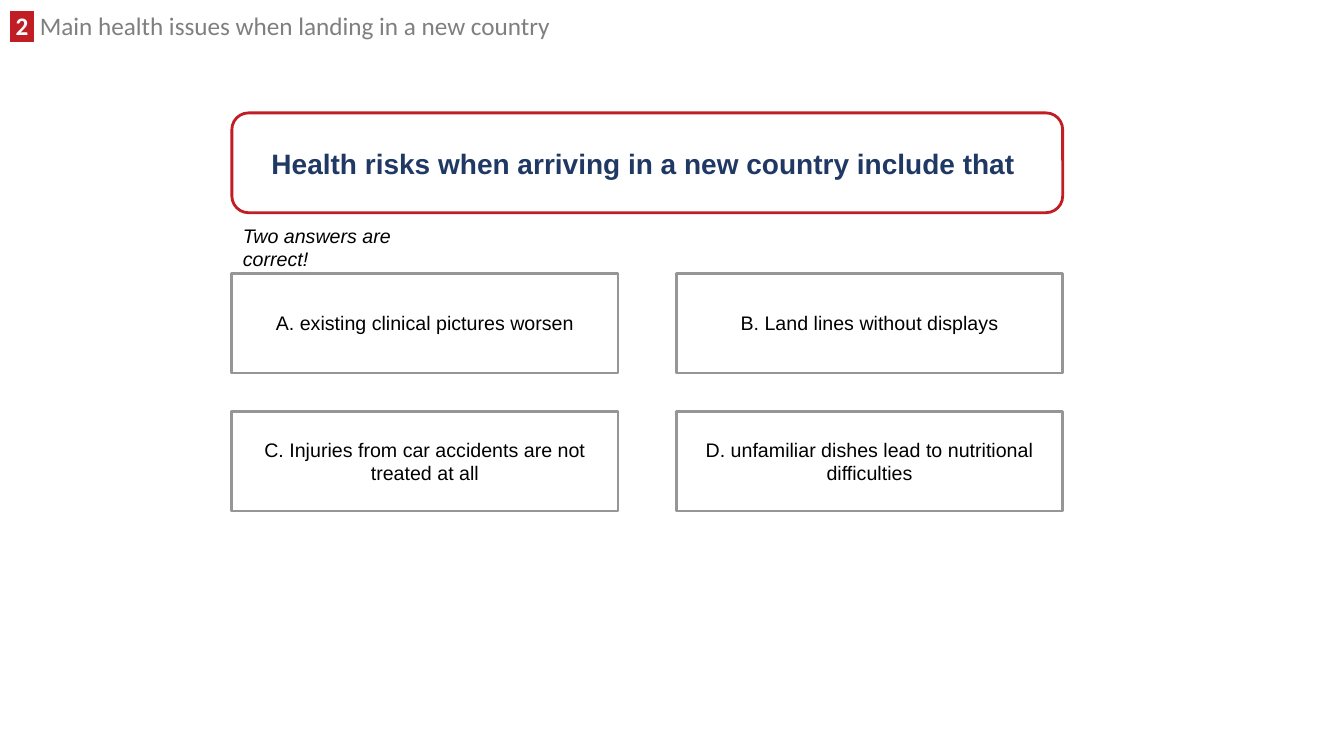
from lxml import etree
from pptx import Presentation
from pptx.dml.color import RGBColor
from pptx.enum.shapes import MSO_SHAPE
from pptx.enum.text import MSO_ANCHOR, MSO_AUTO_SIZE, PP_ALIGN
from pptx.oxml.ns import qn
from pptx.util import Inches, Pt

RECTANGLE = MSO_SHAPE.RECTANGLE
ROUNDED = MSO_SHAPE.ROUNDED_RECTANGLE
MIDDLE = MSO_ANCHOR.MIDDLE
CENTER = PP_ALIGN.CENTER
GROW = MSO_AUTO_SIZE.SHAPE_TO_FIT_TEXT

WHITE = RGBColor(0xFF, 0xFF, 0xFF)
BLACK = RGBColor(0, 0, 0)
RED = RGBColor(0xC0, 0x1E, 0x24)
NAVY = RGBColor(0x20, 0x38, 0x64)
GRAY = RGBColor(0x7F, 0x7F, 0x7F)
BORDER_GRAY = RGBColor(0x96, 0x96, 0x96)

SECTION_NUMBER = " 2 "
SECTION_TITLE = " Main health issues when landing in a new country"
QUESTION = "Health risks when arriving in a new country include that "
HINT = "Two answers are correct!"
ANSWERS = [
    "A. existing clinical pictures worsen",
    "B. Land lines without displays",
    "C. Injuries from car accidents are not treated at all",
    "D. unfamiliar dishes lead to nutritional difficulties",
]

NUMBER_FORMAT = {"name": "Calibri", "size": Pt(18), "bold": True, "color": WHITE}
TITLE_FORMAT = {"name": "Calibri", "size": Pt(18), "bold": False, "color": GRAY}
QUESTION_FORMAT = {"name": "Arial", "size": Pt(20), "bold": True, "color": NAVY}
ANSWER_FORMAT = {"name": "Arial", "size": Pt(14), "color": BLACK}
HINT_FORMAT = {**ANSWER_FORMAT, "italic": True}

LEFT, QUESTION_TOP, QUESTION_WIDTH = 2.3, 1.12, 8.24
ANSWERS_TOP, ANSWER_WIDTH, BOX_HEIGHT = 2.71, 3.83, 0.99
COLUMN_STEP, ROW_STEP = 4.41, 1.37


def add_run(paragraph, text, text_format):
    run = paragraph.add_run()
    run.text = text
    for name, value in text_format.items():
        if name == "color":
            run.font.color.rgb = value
        else:
            setattr(run.font, name, value)
    return run


def highlight(run, color):
    mark = etree.Element(qn("a:highlight"))
    etree.SubElement(mark, qn("a:srgbClr"), val=str(color))
    run.font._element.find(qn("a:solidFill")).addnext(mark)


def add_text_box(slide, left, top, width, height):
    box = slide.shapes.add_textbox(*map(Inches, (left, top, width, height)))
    box.text_frame.word_wrap = True
    box.text_frame.auto_size = GROW
    return box.text_frame.paragraphs[0]


def add_box(slide, kind, left, top, width, border, text, text_format):
    shape = slide.shapes.add_shape(kind, *map(Inches, (left, top, width, BOX_HEIGHT)))
    shape.shadow.inherit = False
    shape.fill.solid()
    shape.fill.fore_color.rgb = WHITE
    shape.line.color.rgb = border
    shape.line.width = Pt(2)
    shape.text_frame.word_wrap = True
    shape.text_frame.vertical_anchor = MIDDLE
    paragraph = shape.text_frame.paragraphs[0]
    paragraph.alignment = CENTER
    add_run(paragraph, text, text_format)


def main():
    presentation = Presentation()
    presentation.slide_width = Inches(13.33)
    presentation.slide_height = Inches(7.5)
    slide = presentation.slides.add_slide(presentation.slide_layouts[6])

    heading = add_text_box(slide, 0, 0.11, 5.71, 0.35)
    heading.line_spacing = 0.8
    highlight(add_run(heading, SECTION_NUMBER, NUMBER_FORMAT), RED)
    add_run(heading, SECTION_TITLE, TITLE_FORMAT)

    add_box(slide, ROUNDED, LEFT, QUESTION_TOP, QUESTION_WIDTH, RED,
            QUESTION, QUESTION_FORMAT)
    for index, answer in enumerate(ANSWERS):
        row, column = divmod(index, 2)
        add_box(slide, RECTANGLE, LEFT + column * COLUMN_STEP,
                ANSWERS_TOP + row * ROW_STEP, ANSWER_WIDTH, BORDER_GRAY,
                answer, ANSWER_FORMAT)

    add_run(add_text_box(slide, 2.31, 2.17, 2.2, 0.34), HINT, HINT_FORMAT)
    presentation.save("out.pptx")


if __name__ == "__main__":
    main()
